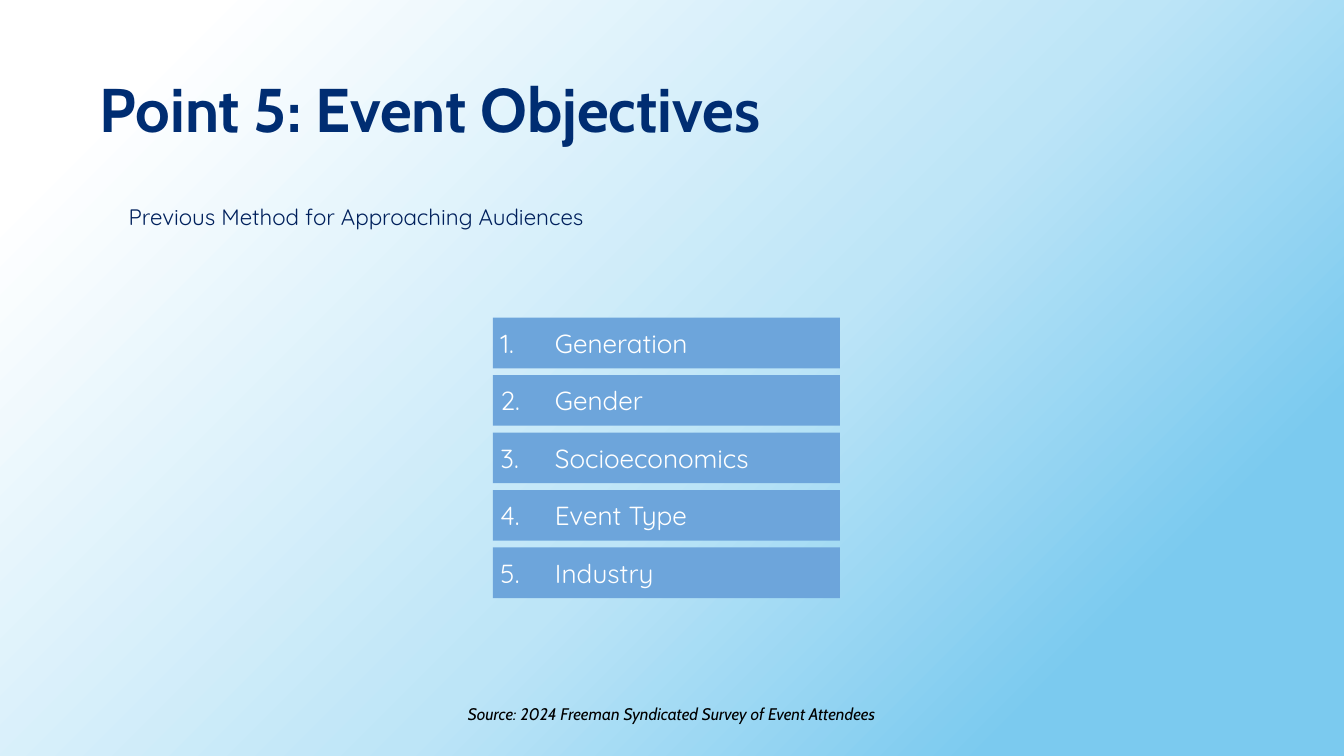
from pptx import Presentation
from pptx.dml.color import RGBColor
from pptx.enum import shapes, text
from pptx.oxml import parse_xml
from pptx.oxml.ns import qn
from pptx.util import Pt
from lxml import etree

NS = "http://schemas.openxmlformats.org/drawingml/2006/main"
WHITE = "FFFFFF"
STOPS = [(17, "7BCAEF"), (45, "BDE5F7"), (90, WHITE)]
FACTORS = ["Generation", "Gender", "Socioeconomics", "Event Type", "Industry"]


def rgb(value):
    return RGBColor.from_string(value)


def set_background(s):
    fill = s.background.fill
    fill.gradient()
    old = s.background._cSld.find(".//" + qn("a:gradFill"))
    stops = "".join(
        f'<a:gs pos="{pos * 1000}"><a:srgbClr val="{color}"/></a:gs>'
        for pos, color in STOPS
    )
    new = parse_xml(
        f'<a:gradFill xmlns:a="{NS}" rotWithShape="1"><a:gsLst>{stops}</a:gsLst>'
        '<a:path path="circle"><a:fillToRect l="100000" t="100000"/></a:path>'
        "<a:tileRect/></a:gradFill>"
    )
    old.getparent().replace(old, new)


def format_run(p, font, size, color, bold=False, italic=False):
    f = p.runs[0].font
    f.name, f.size, f.bold, f.italic = font, Pt(size), bold, italic
    f.color.rgb = rgb(color)


def add_text(s, box, words, font, size, color, wrap=True, **style):
    tf = s.shapes.add_textbox(*map(Pt, box)).text_frame
    tf.word_wrap = wrap
    tf.vertical_anchor = text.MSO_ANCHOR.MIDDLE
    tf.text = words
    format_run(tf.paragraphs[0], font, size, color, **style)
    return tf


def number_paragraph(p, number, indent):
    pPr = p._p.get_or_add_pPr()
    pPr.set("marL", str(Pt(indent)))
    pPr.set("indent", str(-Pt(indent)))
    font = etree.SubElement(pPr, qn("a:buFont"))
    font.set("typeface", "Quicksand")
    bullet = etree.SubElement(pPr, qn("a:buAutoNum"))
    bullet.set("type", "arabicPeriod")
    bullet.set("startAt", str(number))


def add_bar(s, box, number, words):
    sp = s.shapes.add_shape(shapes.MSO_SHAPE.RECTANGLE, *map(Pt, box))
    sp.shadow.inherit = False
    sp.fill.solid()
    sp.fill.fore_color.rgb = rgb("6DA5DB")
    sp.line.fill.background()
    tf = sp.text_frame
    tf.vertical_anchor = text.MSO_ANCHOR.MIDDLE
    tf.text = words
    p = tf.paragraphs[0]
    p.alignment = text.PP_ALIGN.LEFT
    number_paragraph(p, number, 52)
    format_run(p, "Quicksand", 24.9, WHITE)


def main():
    prs = Presentation()
    prs.slide_width, prs.slide_height = Pt(1280), Pt(720)
    s = prs.slides.add_slide(prs.slide_layouts[6])
    set_background(s)

    title = add_text(s, (88, 38, 1104, 139), "Point 5: Event Objectives",
                     "Cabin", 58.7, "002D72", bold=True)
    title.paragraphs[0].line_spacing = 0.9

    subtitle = add_text(s, (122.5, 193.7, 491, 25.2),
                        "Previous Method for Approaching Audiences",
                        "Quicksand", 21.3, "00205C")
    subtitle.margin_left = subtitle.margin_right = 0
    subtitle.margin_top = subtitle.margin_bottom = 0
    subtitle.paragraphs[0].space_after = Pt(6.7)

    for i, factor in enumerate(FACTORS):
        add_bar(s, (469.5, 302.6 + 54.7 * i, 330.5, 48.2), i + 1, factor)

    source = add_text(s, (424, 666.7, 431.3, 26.6),
                      "Source: 2024 Freeman Syndicated Survey of Event Attendees",
                      "Cabin", 16, "000000", wrap=False, italic=True)
    source.vertical_anchor = text.MSO_ANCHOR.TOP
    source.auto_size = text.MSO_AUTO_SIZE.SHAPE_TO_FIT_TEXT
    source.paragraphs[0].alignment = text.PP_ALIGN.CENTER

    prs.save("out.pptx")


if __name__ == "__main__":
    main()
